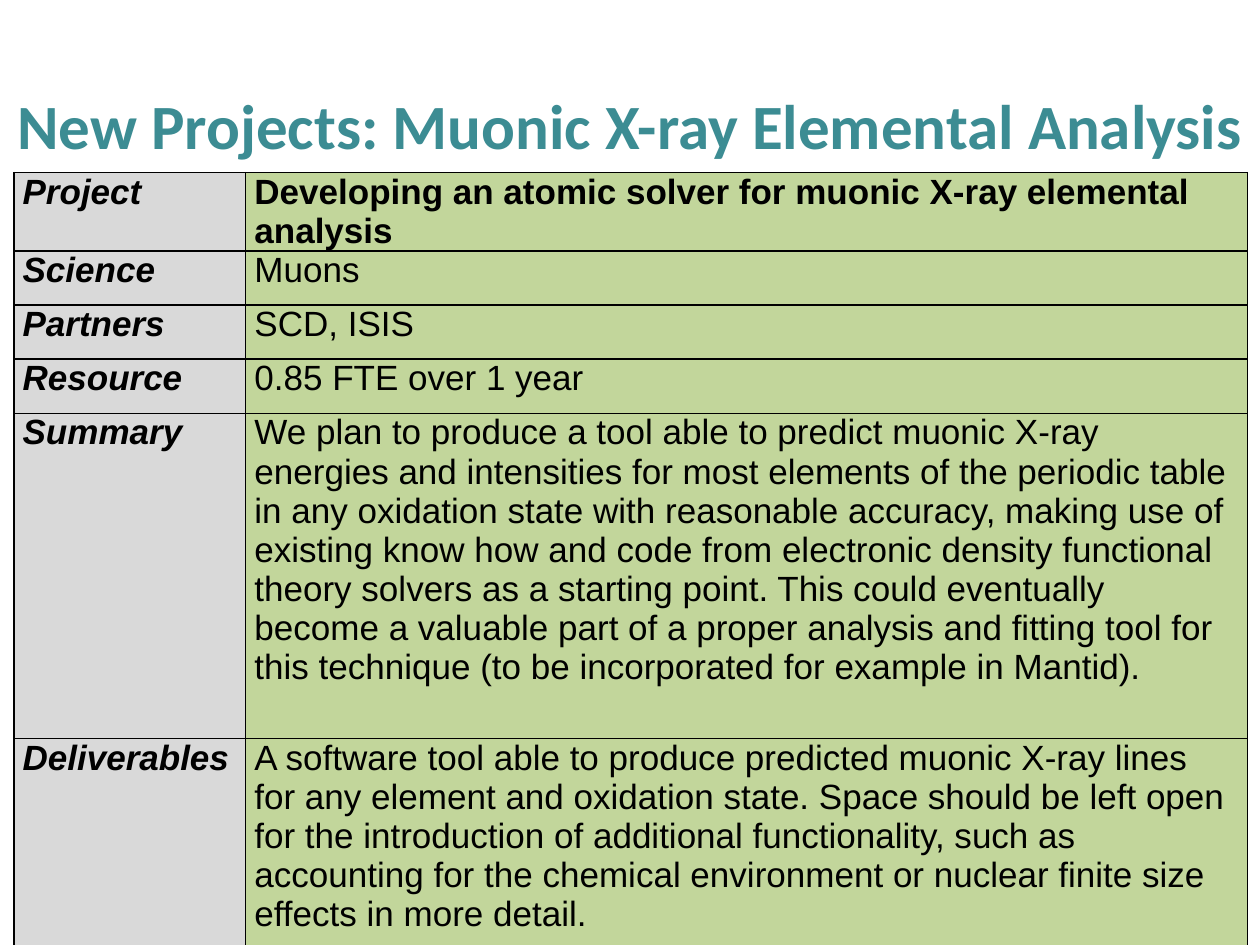
from lxml import etree
from pptx import Presentation
from pptx.dml.color import RGBColor
from pptx.enum import text
from pptx.oxml import ns
from pptx.util import Inches, Pt

TEAL = RGBColor(0x3C, 0x8C, 0x93)
BLACK = RGBColor(0, 0, 0)
GREY = RGBColor(0xD9, 0xD9, 0xD9)
GREEN = RGBColor(0xC2, 0xD6, 0x9B)

TITLE = "New Projects: Muonic X-ray Elemental Analysis"
PROJECT_ROWS = [
    ("Project", "Developing an atomic solver for muonic X-ray elemental analysis", 0.43),
    ("Science", "Muons", 0.43),
    ("Partners", "SCD, ISIS", 0.43),
    ("Resource", "0.85 FTE over 1 year", 0.43),
    ("Summary",
     "We plan to produce a tool able to predict muonic X-ray energies and intensities "
     "for most elements of the periodic table in any oxidation state with reasonable "
     "accuracy, making use of existing know how and code from electronic density "
     "functional theory solvers as a starting point. This could eventually become a "
     "valuable part of a proper analysis and fitting tool for this technique (to be "
     "incorporated for example in Mantid).", 2.58),
    ("Deliverables",
     "A software tool able to produce predicted muonic X-ray lines for any element and "
     "oxidation state. Space should be left open for the introduction of additional "
     "functionality, such as accounting for the chemical environment or nuclear finite "
     "size effects in more detail.", 1.72),
]
COLUMN_WIDTHS = [1.84, 7.95]


def write_text(frame, content, font="Arial", size=20, color=BLACK, bold=False,
               italic=False, align=text.PP_ALIGN.LEFT):
    paragraph = frame.paragraphs[0]
    paragraph.alignment = align
    run = paragraph.add_run()
    run.text = content
    run.font.name = font
    run.font.size = Pt(size)
    run.font.color.rgb = color
    run.font.bold = bold
    run.font.italic = italic


def add_borders(cell, color=BLACK, width=1):
    properties = cell._tc.get_or_add_tcPr()
    for side in ("lnL", "lnR", "lnT", "lnB"):
        line = etree.SubElement(properties, ns.qn(f"a:{side}"), w=str(Pt(width)))
        fill = etree.SubElement(line, ns.qn("a:solidFill"))
        etree.SubElement(fill, ns.qn("a:srgbClr"), val=str(color))


def format_cell(cell, content, fill, **text_format):
    cell.margin_left = cell.margin_right = Inches(0.07)
    cell.margin_top = cell.margin_bottom = 0
    cell.vertical_anchor = text.MSO_ANCHOR.TOP
    add_borders(cell)
    cell.fill.solid()
    cell.fill.fore_color.rgb = fill
    write_text(cell.text_frame, content, **text_format)


def add_title(slide):
    title = slide.shapes.title
    title.left, title.top = Inches(0), Inches(0.36)
    title.width, title.height = Inches(10), Inches(1.25)
    frame = title.text_frame
    frame.word_wrap = True
    frame.auto_size = text.MSO_AUTO_SIZE.NONE
    frame.vertical_anchor = text.MSO_ANCHOR.MIDDLE
    write_text(frame, TITLE, font="Calibri", size=36, color=TEAL, bold=True,
               align=text.PP_ALIGN.CENTER)


def add_project_table(slide):
    height = sum(row_height for _, _, row_height in PROJECT_ROWS)
    table = slide.shapes.add_table(
        len(PROJECT_ROWS), len(COLUMN_WIDTHS), Inches(0.11), Inches(1.37),
        Inches(sum(COLUMN_WIDTHS)), Inches(height)).table
    table.first_row = table.horz_banding = False
    for column, width in zip(table.columns, COLUMN_WIDTHS):
        column.width = Inches(width)
    for index, (label, detail, row_height) in enumerate(PROJECT_ROWS):
        table.rows[index].height = Inches(row_height)
        format_cell(table.cell(index, 0), label, GREY, bold=True, italic=True)
        format_cell(table.cell(index, 1), detail, GREEN, bold=index == 0)


def main():
    presentation = Presentation()
    presentation.slide_width = Inches(10)
    presentation.slide_height = Inches(7.5)
    slide = presentation.slides.add_slide(presentation.slide_layouts[5])
    add_title(slide)
    add_project_table(slide)
    presentation.save("out.pptx")


if __name__ == "__main__":
    main()
